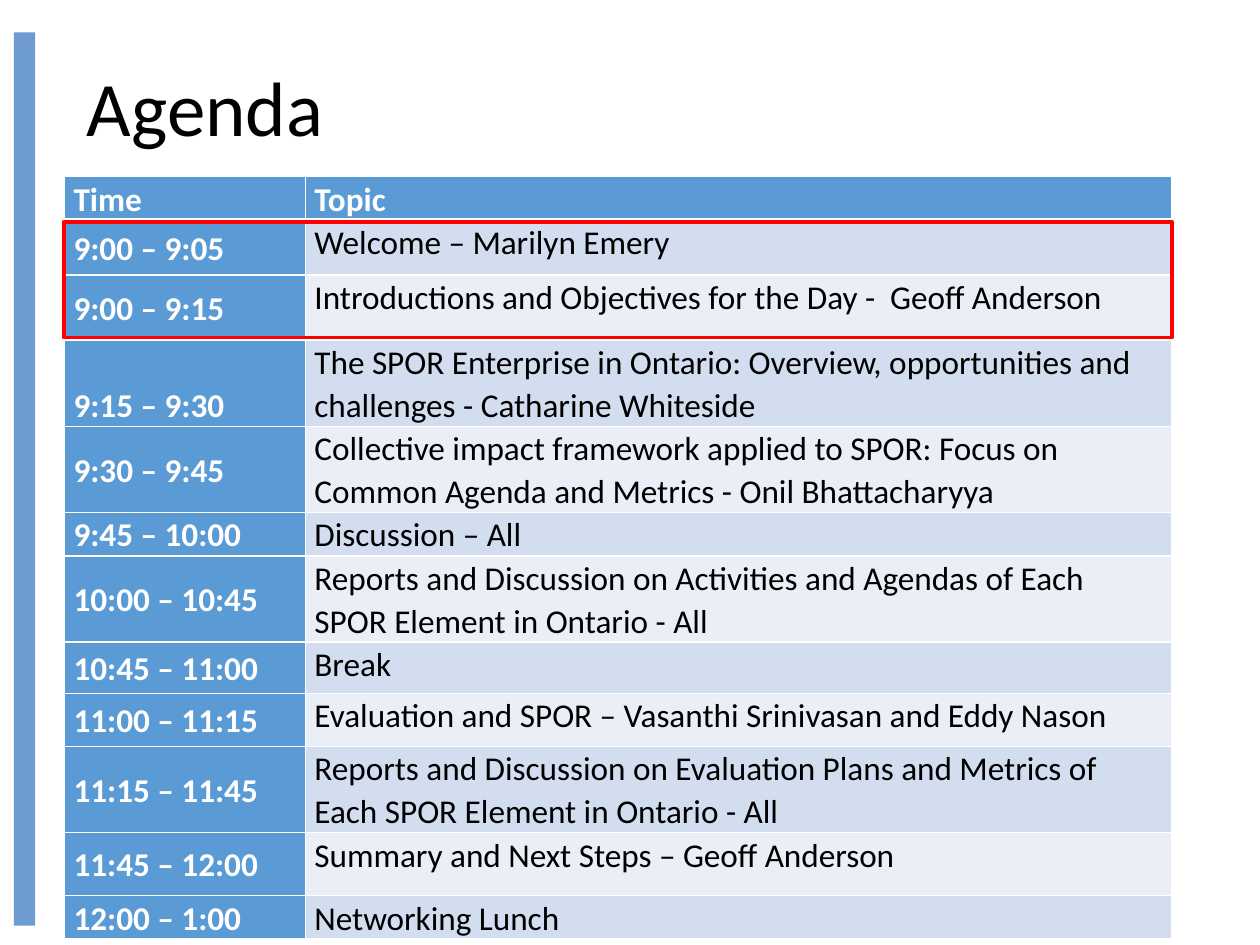
from lxml.etree import SubElement
from pptx import Presentation
from pptx.dml.color import RGBColor
from pptx.enum.shapes import MSO_SHAPE
from pptx.enum.text import MSO_ANCHOR as Anchor, PP_ALIGN as Align
from pptx.oxml.ns import qn
from pptx.util import Pt

WHITE = RGBColor(0xFF, 0xFF, 0xFF)
BLACK = RGBColor(0x00, 0x00, 0x00)
BAR_BLUE = RGBColor(0x6E, 0x9B, 0xD2)
HEADER_BLUE = RGBColor(0x5B, 0x9B, 0xD5)
BAND_DARK = RGBColor(0xD2, 0xDE, 0xEF)
BAND_LIGHT = RGBColor(0xEA, 0xEF, 0xF7)
RED = RGBColor(0xFF, 0x00, 0x00)

AGENDA = [
    ("Time", "Topic", 24, Anchor.TOP),
    ("9:00 – 9:05", "Welcome – Marilyn Emery", 31.5, Anchor.MIDDLE),
    ("9:00 – 9:15", "Introductions and Objectives for the Day -  Geoff Anderson",
     37.2, Anchor.MIDDLE),
    ("9:15 – 9:30", "The SPOR Enterprise in Ontario: Overview, opportunities and "
     "challenges - Catharine Whiteside", 47.5, Anchor.BOTTOM),
    ("9:30 – 9:45", "Collective impact framework applied to SPOR: Focus on "
     "Common Agenda and Metrics - Onil Bhattacharyya", 47.5, Anchor.MIDDLE),
    ("9:45 – 10:00", "Discussion – All", 24, Anchor.TOP),
    ("10:00 – 10:45", "Reports and Discussion on Activities and Agendas of Each "
     "SPOR Element in Ontario - All", 47.5, Anchor.MIDDLE),
    ("10:45 – 11:00", "Break", 29.5, Anchor.MIDDLE),
    ("11:00 – 11:15", "Evaluation and SPOR – Vasanthi Srinivasan and Eddy Nason",
     30.2, Anchor.MIDDLE),
    ("11:15 – 11:45", "Reports and Discussion on Evaluation Plans and Metrics of "
     "Each SPOR Element in Ontario - All", 47.5, Anchor.MIDDLE),
    ("11:45 – 12:00", "Summary and Next Steps – Geoff Anderson", 36, Anchor.MIDDLE),
    ("12:00 – 1:00", "Networking Lunch", 24, Anchor.MIDDLE),
]


class SlideBuilder:
    font_name = "Calibri"
    table_size = 19
    cell_inset = 5.04

    def __init__(self, slide):
        self.slide = slide

    def style(self, paragraph, size, color, bold, spacing):
        paragraph.alignment = Align.LEFT
        paragraph.line_spacing = spacing
        font = paragraph.font
        font.name, font.size, font.bold = self.font_name, Pt(size), bold
        font.color.rgb = color

    def title(self, text, left, top, width, height):
        title = self.slide.shapes.title
        title.left, title.top = Pt(left), Pt(top)
        title.width, title.height = Pt(width), Pt(height)
        frame = title.text_frame
        frame.text = text
        frame.vertical_anchor = Anchor.MIDDLE
        self.style(frame.paragraphs[0], 44, BLACK, False, 0.9)

    def rectangle(self, left, top, width, height, fill=None, line=None):
        rectangle = self.slide.shapes.add_shape(
            MSO_SHAPE.RECTANGLE, Pt(left), Pt(top), Pt(width), Pt(height))
        rectangle.shadow.inherit = False
        if fill is None:
            rectangle.fill.background()
        else:
            rectangle.fill.solid()
            rectangle.fill.fore_color.rgb = fill
        if line is None:
            rectangle.line.fill.background()
        else:
            rectangle.line.color.rgb = line
            rectangle.line.width = Pt(2.25)

    def borders(self, cell, bottom):
        properties = cell._tc.get_or_add_tcPr()
        for side, width in (("L", 1), ("R", 1), ("T", 1), ("B", bottom)):
            edge = SubElement(properties, qn(f"a:ln{side}"), w=str(Pt(width)))
            fill = SubElement(edge, qn("a:solidFill"))
            SubElement(fill, qn("a:srgbClr"), val=str(WHITE))

    def cell(self, cell, text, anchor, fill, color, bold, bottom):
        cell.margin_left = cell.margin_right = Pt(self.cell_inset)
        cell.margin_top = cell.margin_bottom = 0
        cell.vertical_anchor = anchor
        self.borders(cell, bottom)
        cell.fill.solid()
        cell.fill.fore_color.rgb = fill
        cell.text = text
        self.style(cell.text_frame.paragraphs[0], self.table_size, color, bold, 1.07)

    def agenda_table(self, agenda, left, top, widths):
        height = sum(row_height for _, _, row_height, _ in agenda)
        table = self.slide.shapes.add_table(
            len(agenda), len(widths), Pt(left), Pt(top), Pt(sum(widths)), Pt(height)).table
        for column, width in zip(table.columns, widths):
            column.width = Pt(width)
        for index, (time, topic, row_height, anchor) in enumerate(agenda):
            table.rows[index].height = Pt(row_height)
            header = index == 0
            bottom = 3 if header else 1
            band = BAND_DARK if index % 2 else BAND_LIGHT
            self.cell(table.cell(index, 0), time, anchor, HEADER_BLUE, WHITE, True, bottom)
            self.cell(table.cell(index, 1), topic, Anchor.TOP,
                      HEADER_BLUE if header else band,
                      WHITE if header else BLACK, header, bottom)


def main():
    presentation = Presentation()
    presentation.slide_width, presentation.slide_height = Pt(720), Pt(540)
    builder = SlideBuilder(presentation.slides.add_slide(presentation.slide_layouts[5]))
    builder.rectangle(7.9, 18.5, 12.2, 510.5, fill=BAR_BLUE)
    builder.title("Agenda", 42.5, 11.5, 620.6, 104.4)
    builder.agenda_table(AGENDA, 37, 101, (137.7, 494.8))
    builder.rectangle(36.7, 126.7, 632.9, 66.2, line=RED)
    presentation.save("out.pptx")


if __name__ == "__main__":
    main()
